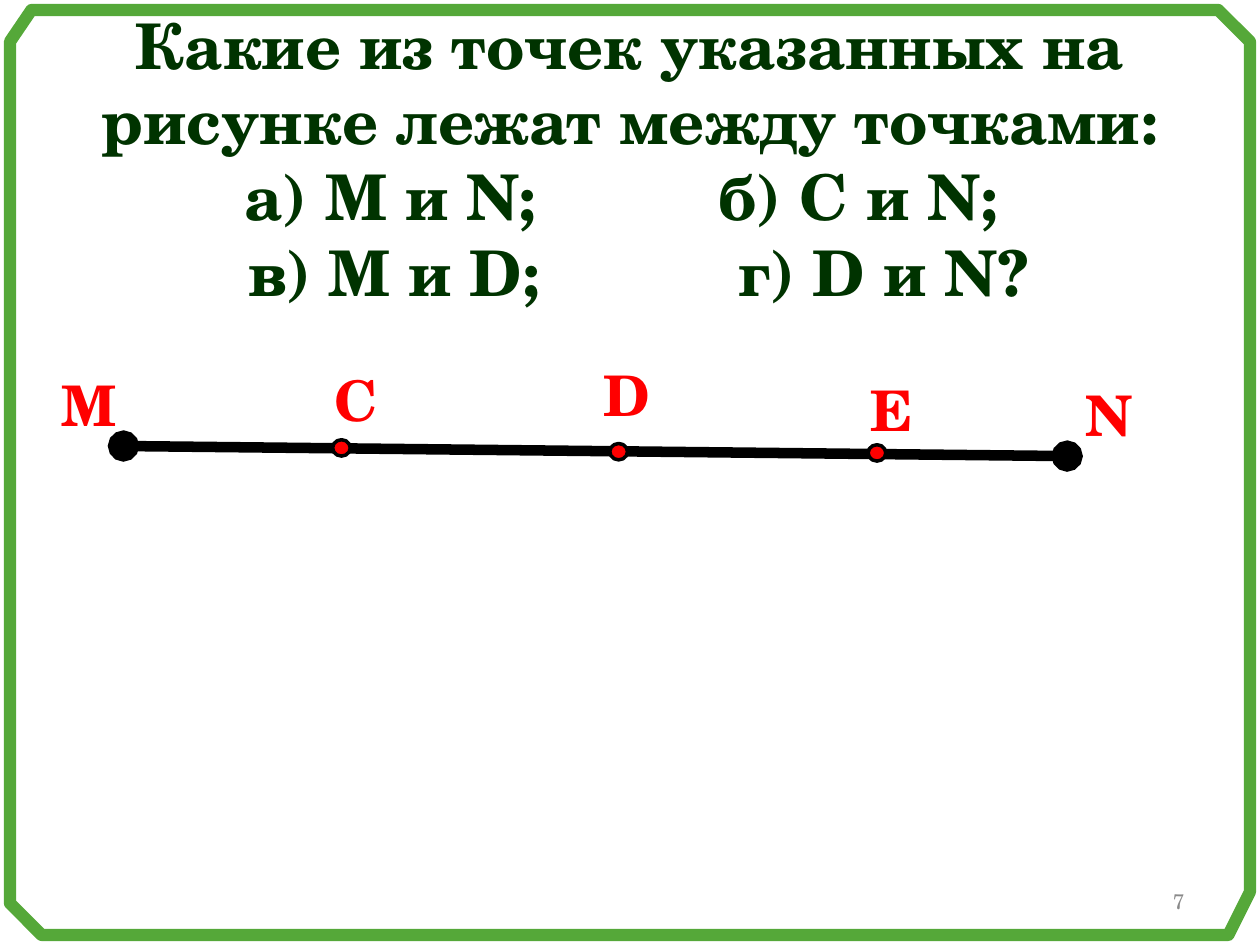
"""Build a geometry question slide about points on the segment MN."""
from lxml.etree import SubElement
from pptx import Presentation
from pptx.dml.color import RGBColor
from pptx.enum.shapes import MSO_CONNECTOR, MSO_SHAPE
from pptx.enum.text import MSO_ANCHOR, MSO_AUTO_SIZE, PP_ALIGN
from pptx.oxml.ns import qn
from pptx.util import Inches, Pt

COLORS = {"title": "003300", "point": "FF0000", "line": "000000",
          "number": "898989", "frame": "55A839"}
FONT = "TeX Gyre Schola"
COLUMNS, ROWS = 100, 75
QUESTION = "Какие из точек указанных на рисунке лежат между точками:"
OPTIONS = [("а) M и N;", "б) C и N;", 17, 54.6),
           ("в) M и D;", "г) D и N?", 17.3, 56.2)]
SEGMENT = (9.8, 35.4, 84.7, 36.2)
END_LABELS = [("M", 3.9, 28.9, 7), ("N", 85.2, 29.7, 5.2)]
INNER_POINTS = [("C", (26.4, 34.9), (25.6, 28.5, 5.2)),
                ("E", (68.9, 35.3), (68.1, 29.3, 5.3)),
                ("D", (48.4, 35.2), (46.9, 28.1, 5.8))]
DOT_SIZE = (1.4, 1.3)
LABEL_HEIGHT = 6.4
FRAME = [(0.8, 3.3), (0.8, 71.7), (3.3, 74.2), (97.5, 74.2), (99.2, 70.8),
         (99.2, 3.3), (96.7, 0.8), (2.5, 0.8)]

deck = Presentation()
deck.slide_width, deck.slide_height = Inches(10), Inches(7.5)
page = deck.slides.add_slide(deck.slide_layouts[6])


def across(columns):
    return round(deck.slide_width * columns / COLUMNS)


def down(rows):
    return round(deck.slide_height * rows / ROWS)


def place(left, top, width, height):
    return across(left), down(top), across(width), down(height)


def set_line(shape, color, width):
    shape.line.color.rgb = RGBColor.from_string(COLORS[color])
    shape.line.width = Pt(width)


def add_text(text, area, *, size, color, parent=page, bold=True, wrap=True,
             align=PP_ALIGN.LEFT, anchor=MSO_ANCHOR.TOP, grow=True):
    box = parent.shapes.add_textbox(*place(*area))
    frame = box.text_frame
    frame.word_wrap = wrap
    frame.vertical_anchor = anchor
    frame.auto_size = MSO_AUTO_SIZE.SHAPE_TO_FIT_TEXT if grow else MSO_AUTO_SIZE.NONE
    frame.text = text
    for para in frame.paragraphs:
        para.alignment = align
        for span in para.runs:
            span.font.name, span.font.size, span.font.bold = FONT, Pt(size), bold
            span.font.color.rgb = RGBColor.from_string(COLORS[color])
    return box


def add_tabs(para, stops):
    para.alignment = PP_ALIGN.LEFT
    tabs = SubElement(para._p.get_or_add_pPr(), qn("a:tabLst"))
    for stop in stops:
        SubElement(tabs, qn("a:tab"), pos=str(across(stop)), algn="l")


def add_question():
    lines = [QUESTION] + [f"\t{first}\t{second}" for first, second, *_ in OPTIONS]
    box = add_text("\n".join(lines), (1.4, 0, 97.2, 25.2), size=36,
                   color="title", align=PP_ALIGN.CENTER)
    for para, option in zip(box.text_frame.paragraphs[1:], OPTIONS):
        add_tabs(para, option[2:])


def add_segment():
    left, top, right, bottom = SEGMENT
    segment = page.shapes.add_connector(MSO_CONNECTOR.STRAIGHT, across(left),
                                        down(top), across(right), down(bottom))
    set_line(segment, "line", 6)
    outline = segment.line._get_or_add_ln()
    for end in ("a:headEnd", "a:tailEnd"):
        SubElement(outline, qn(end), type="oval")
    SubElement(segment._element.spPr, qn("a:effectLst"))


def add_label(name, left, top, width, **options):
    add_text(name, (left, top, width, LABEL_HEIGHT), size=32, color="point", **options)


def add_inner_point(name, dot_at, label_at):
    group = page.shapes.add_group_shape()
    dot = group.shapes.add_shape(MSO_SHAPE.OVAL, *place(*dot_at, *DOT_SIZE))
    dot.shadow.inherit = False
    dot.fill.solid()
    dot.fill.fore_color.rgb = RGBColor.from_string(COLORS["point"])
    set_line(dot, "line", 2)
    add_label(name, *label_at, parent=group, wrap=False)


def add_frame():
    corners = [(across(column), down(row)) for column, row in FRAME]
    builder = page.shapes.build_freeform(*corners[0])
    builder.add_line_segments(corners[1:], close=True)
    frame = builder.convert_to_shape()
    frame.shadow.inherit = False
    frame.fill.background()
    set_line(frame, "frame", 7)
    SubElement(frame.line._get_or_add_ln(), qn("a:round"))


def main():
    add_question()
    add_segment()
    for label in END_LABELS:
        add_label(*label)
    for point in INNER_POINTS:
        add_inner_point(*point)
    add_text("7", (71.7, 69.5, 23.3, 4), size=12, color="number", bold=False,
             align=PP_ALIGN.RIGHT, anchor=MSO_ANCHOR.MIDDLE, grow=False)
    add_frame()
    deck.save("out.pptx")


if __name__ == "__main__":
    main()
